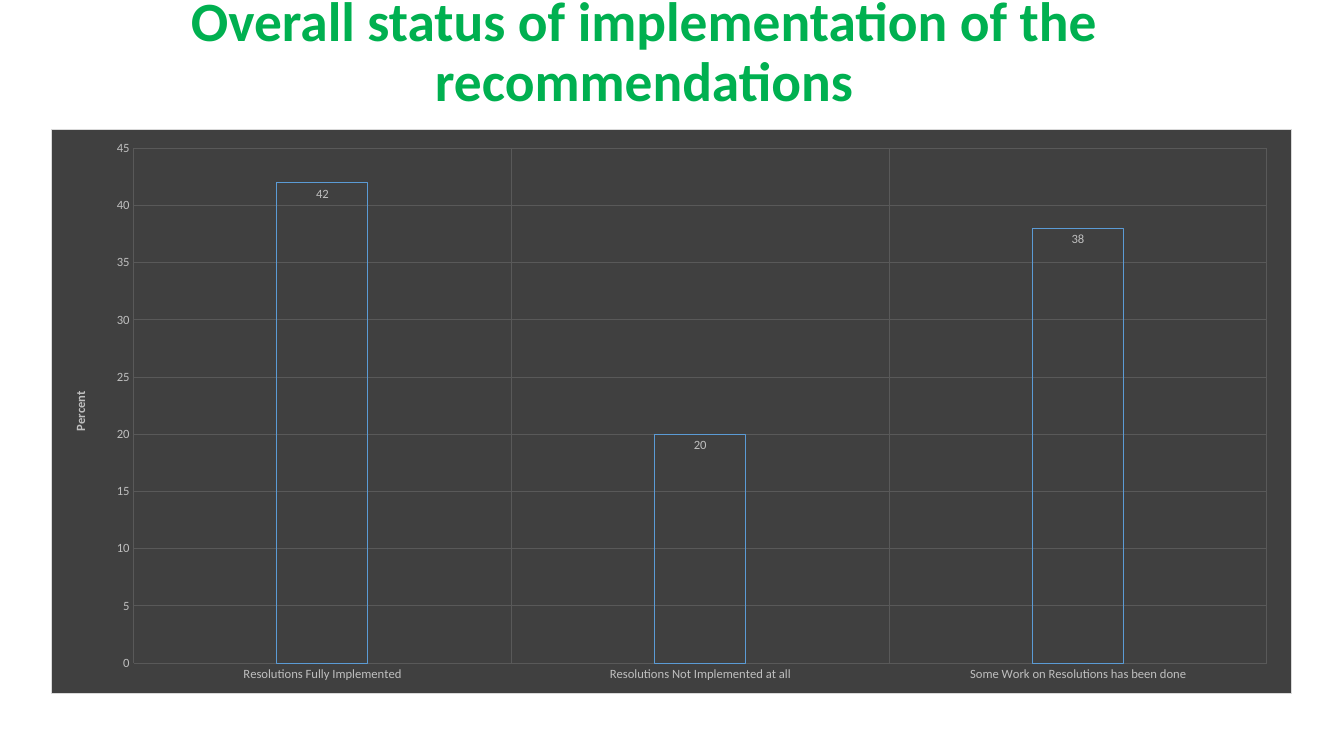
from dataclasses import dataclass

from lxml import etree
from pptx import Presentation
from pptx import util as u
from pptx.chart import axis as chart_axis
from pptx.chart import chart as chart_part
from pptx.chart import data as chart_data
from pptx.dml import color, line
from pptx.enum import chart as ec
from pptx.enum import text
from pptx.oxml import ns


@dataclass(frozen=True)
class Theme:
    font: str = "Calibri"
    title: str = "00B050"
    panel: str = "404040"
    panel_border: str = "D9D9D9"
    grid: str = "595959"
    label: str = "BFBFBF"
    column: str = "5B9BD5"
    title_size: float = 39.6
    chart_size: float = 10
    label_size: float = 9
    line_width: float = 0.75


@dataclass(frozen=True)
class Box:
    left: float
    top: float
    width: float
    height: float

    def points(self) -> tuple:
        return tuple(u.Pt(v) for v in (self.left, self.top, self.width, self.height))


@dataclass(frozen=True)
class Status:
    label: str
    percent: int


THEME = Theme()
TITLE_BOX = Box(36.7, 0, 846.7, 76)
CHART_BOX = Box(36.7, 92.2, 886.3, 403.2)
STATUSES = (
    Status("Resolutions Fully Implemented", 42),
    Status("Resolutions Not Implemented at all", 20),
    Status("Some Work on Resolutions has been done", 38),
)


def style_font(font, size: float, rgb: str, bold: bool = False) -> None:
    font.name = THEME.font
    font.size = u.Pt(size)
    font.bold = bold
    font.color.rgb = color.RGBColor.from_string(rgb)


def style_line(target: line.LineFormat, rgb: str) -> None:
    target.color.rgb = color.RGBColor.from_string(rgb)
    target.width = u.Pt(THEME.line_width)


def style_axis(axis: chart_axis._BaseAxis) -> None:
    axis.major_tick_mark = axis.minor_tick_mark = ec.XL_TICK_MARK.NONE
    axis.format.line.fill.background()
    axis.has_major_gridlines = True
    style_line(axis.major_gridlines.format.line, THEME.grid)
    style_font(axis.tick_labels.font, THEME.label_size, THEME.label)


def fill_panel(chart: chart_part.Chart) -> None:
    """Give the whole chart area its fill and border."""
    panel = etree.fromstring(
        f'<c:spPr {ns.nsdecls("c", "a")}>'
        f'<a:solidFill><a:srgbClr val="{THEME.panel}"/></a:solidFill>'
        f'<a:ln w="{u.Pt(THEME.line_width)}"><a:solidFill>'
        f'<a:srgbClr val="{THEME.panel_border}"/></a:solidFill></a:ln></c:spPr>'
    )
    chart.element.find(ns.qn("c:chart")).addnext(panel)


def add_title(slide) -> None:
    frame = slide.shapes.add_textbox(*TITLE_BOX.points()).text_frame
    frame.word_wrap = True
    frame.vertical_anchor = text.MSO_ANCHOR.MIDDLE
    frame.margin_top = frame.margin_bottom = 0
    heading = frame.paragraphs[0]
    heading.text = "Overall status of implementation of the recommendations"
    heading.alignment = text.PP_ALIGN.CENTER
    heading.line_spacing = 0.9
    style_font(heading.runs[0].font, THEME.title_size, THEME.title, bold=True)


def add_percent_title(axis: chart_axis.ValueAxis) -> None:
    frame = axis.axis_title.text_frame
    frame.text = "Percent"
    style_font(frame.paragraphs[0].runs[0].font, THEME.label_size, THEME.label, bold=True)
    body = next(axis.axis_title._element.iter(ns.qn("a:bodyPr")))
    body.set("rot", "-5400000")
    body.set("vert", "horz")


def add_status_chart(slide) -> None:
    data = chart_data.CategoryChartData()
    data.categories = [status.label for status in STATUSES]
    data.add_series("Series 1", [status.percent for status in STATUSES])
    chart = slide.shapes.add_chart(
        ec.XL_CHART_TYPE.COLUMN_CLUSTERED, *CHART_BOX.points(), data
    ).chart
    chart.has_legend = chart.has_title = False
    style_font(chart.font, THEME.chart_size, "000000")
    fill_panel(chart)

    for axis in (chart.category_axis, chart.value_axis):
        style_axis(axis)
    chart.value_axis.minimum_scale = 0
    chart.value_axis.maximum_scale = 45
    chart.value_axis.major_unit = 5
    add_percent_title(chart.value_axis)

    plot = chart.plots[0]
    plot.gap_width = 315
    plot.overlap = -40
    plot.vary_by_categories = False
    columns = plot.series[0]
    columns.format.fill.background()
    style_line(columns.format.line, THEME.column)
    labels = columns.data_labels
    labels.show_value = True
    labels.position = ec.XL_LABEL_POSITION.INSIDE_END
    style_font(labels.font, THEME.label_size, THEME.label)


def main() -> None:
    deck = Presentation()
    deck.slide_width, deck.slide_height = u.Pt(960), u.Pt(540)
    slide = deck.slides.add_slide(deck.slide_layouts[6])
    add_title(slide)
    add_status_chart(slide)
    deck.save("out.pptx")


if __name__ == "__main__":
    main()
